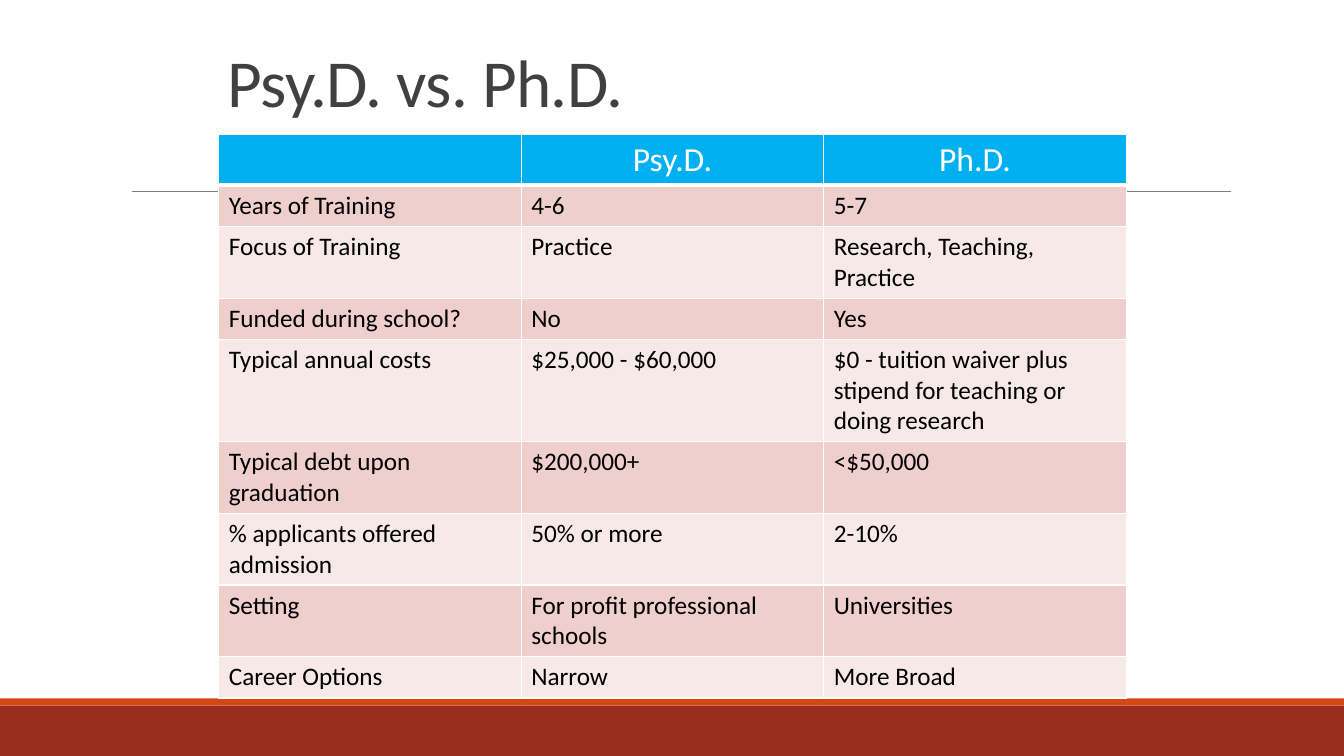
from pptx import Presentation
from pptx import util as u
from pptx.dml.color import RGBColor
from pptx.enum import shapes, text
from pptx.oxml import parse_xml
from pptx.oxml.ns import nsdecls, qn

COLORS = {
    "band": "9B2D1F", "stripe": "D34817", "rule": "808080", "title": "404040",
    "header": "00B0F0", "odd": "EFCFCC", "even": "F7E9E8",
    "white": "FFFFFF", "black": "000000",
}
FONT = "Calibri"
TITLE = "Psy.D. vs. Ph.D."
HEADER = ("", "Psy.D.", "Ph.D.")
ROWS = [
    (1, "Years of Training", "4-6", "5-7"),
    (2, "Focus of Training", "Practice", "Research, Teaching, Practice"),
    (1, "Funded during school?", "No", "Yes"),
    (3, "Typical annual costs", "$25,000 - $60,000",
     "$0 - tuition waiver plus stipend for teaching or doing research"),
    (2, "Typical debt upon graduation", "$200,000+", "<$50,000"),
    (2, "% applicants offered admission", "50% or more", "2-10%"),
    (2, "Setting", "For profit professional schools", "Universities"),
    (1, "Career Options", "Narrow", "More Broad"),
]
BANDS = [(7, 0.5, "band"), (6.93, 0.07, "stripe")]
WIDTH, HEIGHT = 13.33, 7.5
COLUMN_WIDTH, HEADER_HEIGHT = 3, 0.5
LINE_HEIGHT, ROW_PADDING = 0.3, 0.11


def color(name):
    return RGBColor.from_string(COLORS[name])


def add_span(para, words, size, tint):
    span = para.add_run()
    span.text = words
    span.font.name = FONT
    span.font.size = u.Pt(size)
    span.font.bold = False
    span.font.color.rgb = color(tint)
    return span


def add_borders(cell, bottom):
    props = cell._tc.get_or_add_tcPr()
    sides = (("L", 1), ("R", 1), ("T", 1), ("B", bottom))
    for position, (side, points) in enumerate(sides):
        props.insert(position, parse_xml(
            f'<a:ln{side} {nsdecls("a")} w="{u.Pt(points)}"><a:solidFill>'
            f'<a:srgbClr val="{COLORS["white"]}"/></a:solidFill></a:ln{side}>'))


def fill_cell(cell, words, size, tint, fill, align, bottom):
    cell.fill.solid()
    cell.fill.fore_color.rgb = color(fill)
    add_borders(cell, bottom)
    if words:
        para = cell.text_frame.paragraphs[0]
        para.alignment = align
        add_span(para, words, size, tint)


def add_background(page):
    for top, height, name in BANDS:
        band = page.shapes.add_shape(
            shapes.MSO_SHAPE.RECTANGLE, 0, u.Inches(top),
            u.Inches(WIDTH), u.Inches(height))
        band.shadow.inherit = False
        band.fill.solid()
        band.fill.fore_color.rgb = color(name)
        band.line.fill.background()
    rule = page.shapes.add_connector(
        shapes.MSO_CONNECTOR.STRAIGHT, u.Inches(1.31), u.Inches(1.9),
        u.Inches(12.21), u.Inches(1.9))
    rule.line.color.rgb = color("rule")
    rule.line.width = u.Pt(0.5)
    rule._element.spPr.append(parse_xml(f'<a:effectLst {nsdecls("a")}/>'))


def add_title(page):
    title = page.shapes.title
    title.left, title.top = u.Inches(2.16), 0
    title.width, title.height = u.Inches(9), u.Inches(1.25)
    frame = title.text_frame
    frame.auto_size = text.MSO_AUTO_SIZE.NONE
    frame.vertical_anchor = text.MSO_ANCHOR.BOTTOM
    para = frame.paragraphs[0]
    para.alignment = text.PP_ALIGN.LEFT
    para.line_spacing = 0.85
    span = add_span(para, TITLE, 48, "title")
    span._r.get_or_add_rPr().set("spc", "-50")


def add_comparison(page):
    heights = [HEADER_HEIGHT]
    heights += [ROW_PADDING + LINE_HEIGHT * lines for lines, *_ in ROWS]
    table = page.shapes.add_table(
        len(heights), len(HEADER), u.Inches(2.17), u.Inches(1.33),
        u.Inches(COLUMN_WIDTH * len(HEADER)), u.Inches(sum(heights))).table
    for column in table.columns:
        column.width = u.Inches(COLUMN_WIDTH)
    for row, height in zip(table.rows, heights):
        row.height = u.Inches(height)
    for c, words in enumerate(HEADER):
        fill_cell(table.cell(0, c), words, 24, "white", "header",
                  text.PP_ALIGN.CENTER, 3)
    for r, (_, *entries) in enumerate(ROWS, start=1):
        for c, words in enumerate(entries):
            fill_cell(table.cell(r, c), words, 18, "black",
                      "odd" if r % 2 else "even", text.PP_ALIGN.LEFT, 1)


def main():
    deck = Presentation()
    deck.slide_width, deck.slide_height = u.Inches(WIDTH), u.Inches(HEIGHT)
    page = deck.slides.add_slide(deck.slide_layouts[5])
    page.background.fill.solid()
    page.background.fill.fore_color.rgb = color("white")
    add_background(page)
    add_title(page)
    add_comparison(page)
    deck.save("out.pptx")


if __name__ == "__main__":
    main()
